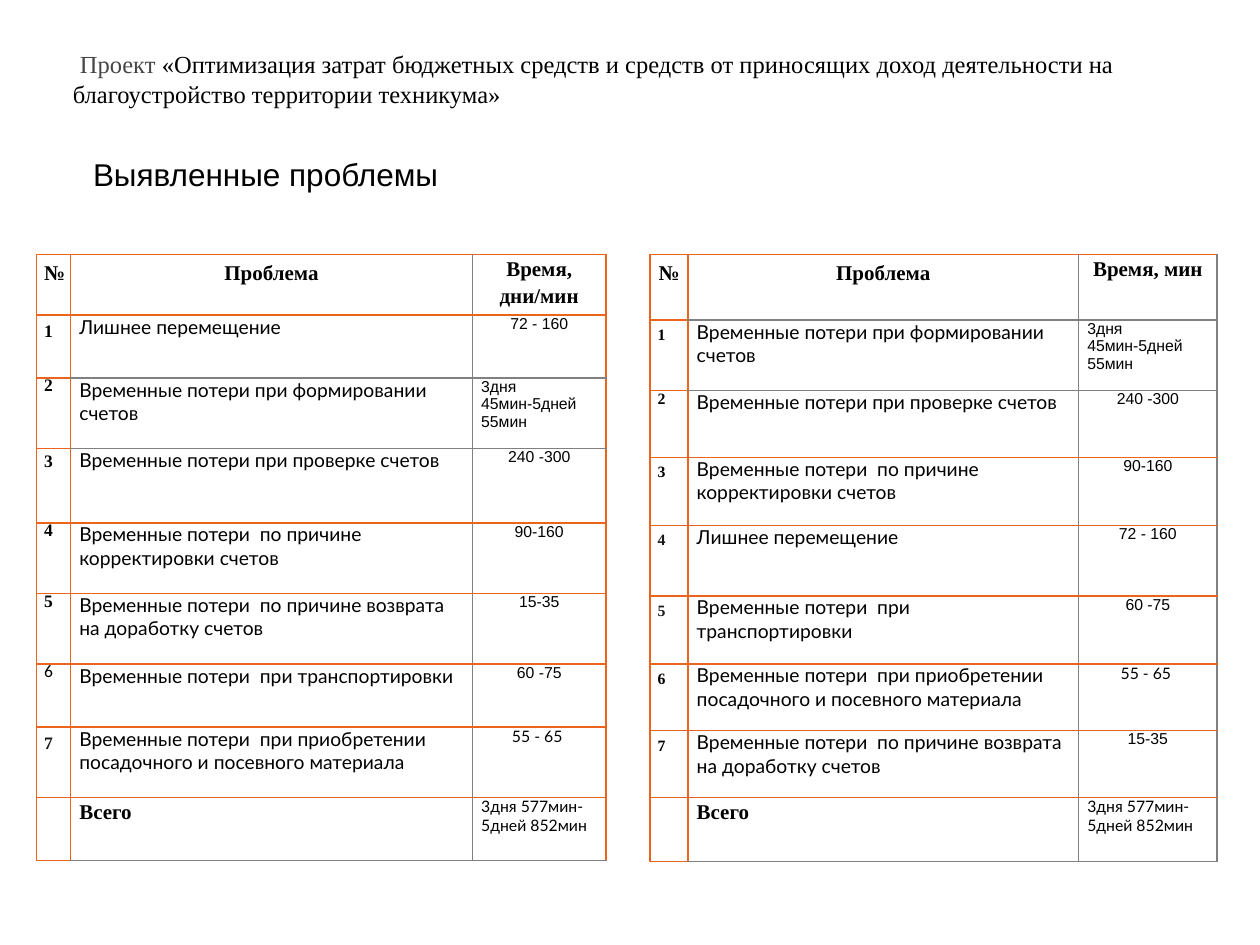
from lxml.etree import SubElement
from pptx import Presentation
from pptx.dml.color import RGBColor
from pptx.enum.text import PP_ALIGN
from pptx.oxml.ns import qn
from pptx.util import Inches, Pt

COLORS = {"black": "000000", "dark": "191919", "title": "464646", "white": "FFFFFF",
          "orange": "EB641B", "gray": "808080"}
SERIF, SANS, BODY = "Times New Roman", "Arial", "Lato"
LEFT, CENTER = PP_ALIGN.LEFT, PP_ALIGN.CENTER
HEADER_INSETS, BODY_INSETS, NO_INSETS = (0.06, 0.03), (0.07, 0), (0, 0)

MOVING = ("Лишнее перемещение", "72 - 160", SANS, CENTER)
FORMING = ("Временные потери при формировании счетов", "3дня 45мин-5дней 55мин", SANS, LEFT)
CHECKING = ("Временные потери при проверке счетов", "240 -300", SANS, CENTER)
CORRECTING = ("Временные потери  по причине корректировки счетов", "90-160", SANS, CENTER)
RETURNING = ("Временные потери  по причине возврата на доработку счетов", "15-35", SANS, CENTER)
TRANSPORT = ("Временные потери  при транспортировки", "60 -75", SANS, CENTER)
PURCHASE = ("Временные потери  при приобретении посадочного и посевного материала",
            "55 - 65 ", BODY, CENTER)
TOTAL = ("Всего", "3дня 577мин- 5дней 852мин", BODY, LEFT)

TABLES = [
    {"left": 5.16, "columns": [0.3, 3.1, 1.1], "time": "Время, мин",
     "rows": [0.52, 0.56, 0.53, 0.54, 0.56, 0.54, 0.53, 0.53, 0.51],
     "problems": [FORMING, CHECKING, CORRECTING, MOVING, TRANSPORT, PURCHASE, RETURNING],
     "size": 9, "spacing": {2: Pt(8)}, "dark": {4, 5}, "plain": set(),
     "gray_lines": {1, 2, 9}, "edge": "gray"},
    {"left": 0.29, "columns": [0.27, 3.19, 1.06], "time": "Время, дни/мин",
     "rows": [0.48, 0.5, 0.56, 0.59, 0.56, 0.56, 0.5, 0.56, 0.5],
     "problems": [MOVING, FORMING, CHECKING, CORRECTING, RETURNING, TRANSPORT, PURCHASE],
     "size": 10, "spacing": {2: Pt(8), 3: 1.0, 4: Pt(8), 5: Pt(8), 6: Pt(8)},
     "dark": {7}, "plain": {6}, "gray_lines": {2, 3, 9}, "edge": "orange"},
][::-1]


class SlideBuilder:
    """Holds the text style and the current slide and adds elements to it."""

    def __init__(self, slide):
        self.slide = slide

    def style(self, span, size, font, color="black", bold=False):
        span.font.size = Pt(size)
        span.font.name = font
        span.font.bold = bold
        span.font.color.rgb = RGBColor.from_string(COLORS[color])

    def text(self, left, top, width, height, spans, wrap=True):
        box = self.slide.shapes.add_textbox(*map(Inches, (left, top, width, height)))
        box.text_frame.word_wrap = wrap
        para = box.text_frame.paragraphs[0]
        for words, size, font, color in spans:
            span = para.add_run()
            span.text = words
            self.style(span, size, font, color)

    def border(self, cell, sides):
        properties = cell._tc.get_or_add_tcPr()
        for position, (side, color) in enumerate(sides.items()):
            line = properties.makeelement(qn(f"a:ln{side}"), {"w": str(Pt(1))})
            fill = SubElement(line, qn("a:solidFill"))
            SubElement(fill, qn("a:srgbClr"), {"val": COLORS[color]})
            properties.insert(position, line)

    def cell(self, cell, words, size, font, insets=BODY_INSETS, align=LEFT, spacing=None,
             color="black", bold=False):
        cell.margin_left = cell.margin_right = Inches(insets[0])
        cell.margin_top = cell.margin_bottom = Inches(insets[1])
        cell.text_frame.text = words
        para = cell.text_frame.paragraphs[0]
        para.alignment = align
        para.line_spacing = spacing
        for span in para.runs:
            self.style(span, size, font, color, bold)

    def table(self, data):
        columns, rows = data["columns"], data["rows"]
        table = self.slide.shapes.add_table(
            len(rows), len(columns), Inches(data["left"]), Inches(2.02),
            Inches(sum(columns)), Inches(sum(rows))).table
        for column, width in zip(table.columns, columns):
            column.width = Inches(width)
        for row, height in zip(table.rows, rows):
            row.height = Inches(height)

        headings = ("№", HEADER_INSETS), ("Проблема", HEADER_INSETS), (data["time"], NO_INSETS)
        for column, (words, insets) in enumerate(headings):
            self.cell(table.cell(0, column), words, 12, SERIF, insets, CENTER, 1.15, bold=True)

        for number, (problem, time, font, align) in enumerate(data["problems"] + [TOTAL], 1):
            if number < len(rows) - 1:
                plain = number in data["plain"]
                self.cell(table.cell(number, 0), str(number), data["size"],
                          "Calibri" if plain else SERIF, HEADER_INSETS,
                          spacing=data["spacing"].get(number, 1.15),
                          color="dark" if number in data["dark"] else "black", bold=not plain)
                self.cell(table.cell(number, 1), problem, 11, BODY)
            else:
                self.cell(table.cell(number, 1), problem, 12, SERIF, spacing=1.15, bold=True)
            self.cell(table.cell(number, 2), time, 9, font, align=align)

        uprights = ["orange", "orange", "gray", data["edge"]]
        for row in range(len(rows)):
            for column in range(len(columns)):
                cell = table.cell(row, column)
                cell.fill.solid()
                cell.fill.fore_color.rgb = RGBColor.from_string(COLORS["white"])
                top, bottom = ("gray" if column and line in data["gray_lines"] else "orange"
                               for line in (row, row + 1))
                self.border(cell, {"L": uprights[column], "R": uprights[column + 1],
                                   "T": top, "B": bottom})


def main():
    deck = Presentation()
    deck.slide_width, deck.slide_height = Inches(10), Inches(7.5)
    page = SlideBuilder(deck.slides.add_slide(deck.slide_layouts[6]))
    for data in TABLES:
        page.table(data)
    page.text(0.64, 1.18, 2.97, 0.4, [("Выявленные проблемы", 18, SANS, "black")], wrap=False)
    page.text(0.48, 0.31, 8.66, 0.91, [
        (" ", 16, SERIF, "title"),
        ("Проект ", 14, SERIF, "title"),
        ("«Оптимизация затрат бюджетных средств и средств от приносящих доход деятельности "
         "на благоустройство территории техникума»", 14, SERIF, "black")])
    deck.save("out.pptx")


if __name__ == "__main__":
    main()
